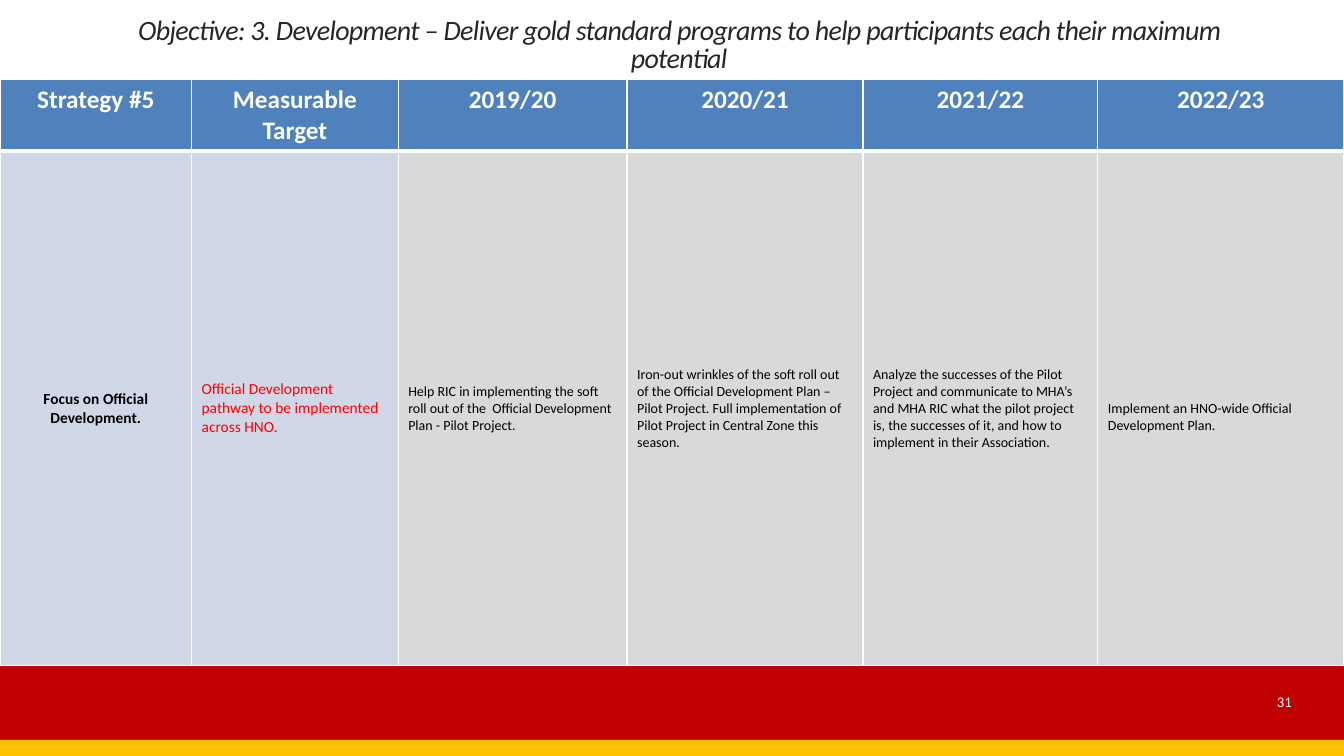
from dataclasses import dataclass

from lxml import etree
from pptx import Presentation
from pptx.dml.color import RGBColor
from pptx.enum.shapes import MSO_SHAPE
from pptx.enum.text import MSO_ANCHOR, PP_ALIGN
from pptx.oxml.ns import qn
from pptx.util import Inches, Pt

RECT = MSO_SHAPE.RECTANGLE
TOP, MIDDLE, BOTTOM = MSO_ANCHOR.TOP, MSO_ANCHOR.MIDDLE, MSO_ANCHOR.BOTTOM
LEFT, CENTER, RIGHT = PP_ALIGN.LEFT, PP_ALIGN.CENTER, PP_ALIGN.RIGHT


@dataclass(frozen=True)
class Theme:
    font: str = "Calibri"
    white: str = "FFFFFF"
    black: str = "000000"
    ink: str = "262626"
    red: str = "FF0000"
    blue: str = "4F81BD"
    pale: str = "D0D8E8"
    gray: str = "D9D9D9"
    crimson: str = "C00000"
    gold: str = "FFC000"
    title: float = 20
    head: float = 18
    goal: float = 11
    body: float = 10
    number: float = 10.5


THEME = Theme()


@dataclass(frozen=True)
class Style:
    size: float
    color: str
    align: PP_ALIGN = LEFT
    anchor: MSO_ANCHOR = MIDDLE
    bold: bool = False
    italic: bool = False


@dataclass(frozen=True)
class Band:
    top: float
    height: float
    color: str


@dataclass(frozen=True)
class Label:
    text: str
    box: tuple[float, float, float, float]
    style: Style
    leading: float = 1.0
    tracking: int = 0


@dataclass(frozen=True)
class Column:
    width: float
    head: str
    text: str
    style: Style
    fill: str
    inset: float = 0.05


HEAD = Style(THEME.head, THEME.white, CENTER, TOP, bold=True)
FOCUS = Style(THEME.goal, THEME.black, CENTER, bold=True)
TARGET = Style(THEME.goal, THEME.red)
BODY = Style(THEME.body, THEME.black)

BANDS = [Band(6.59, 0.75, THEME.crimson), Band(7.34, 0.16, THEME.gold)]
LABELS = [
    Label("31", (11.48, 6.76, 1.43, 0.4), Style(THEME.number, THEME.white, RIGHT)),
    Label(
        "Objective: 3. Development – Deliver gold standard programs to help "
        "participants each their maximum potential",
        (1.13, 0.2, 11.21, 0.59),
        Style(THEME.title, THEME.ink, CENTER, BOTTOM, italic=True),
        leading=0.85,
        tracking=-50,
    ),
]
COLUMNS = [
    Column(1.9, "Strategy #5", "Focus on Official Development.", FOCUS, THEME.pale),
    Column(2.05, "Measurable Target",
           "Official Development pathway to be implemented across HNO.",
           TARGET, THEME.pale),
    Column(2.27, "2019/20",
           "Help RIC in implementing the soft roll out of the  Official "
           "Development Plan - Pilot Project.", BODY, THEME.gray),
    Column(2.34, "2020/21",
           "Iron-out wrinkles of the soft roll out of the Official Development "
           "Plan – Pilot Project. Full implementation of Pilot Project in "
           "Central Zone this season.", BODY, THEME.gray),
    Column(2.33, "2021/22",
           "Analyze the successes of the Pilot Project and communicate to MHA’s "
           "and MHA RIC what the pilot project is, the successes of it, and how "
           "to implement in their Association.", BODY, THEME.gray),
    Column(2.44, "2022/23", "Implement an HNO-wide Official Development Plan.",
           BODY, THEME.gray, inset=0.22),
]
ROWS = [0.7, 5.1]


def write(frame, text: str, style: Style):
    para = frame.paragraphs[0]
    para.alignment = style.align
    run = para.add_run()
    run.text = text
    form = {"name": THEME.font, "size": Pt(style.size),
            "bold": style.bold, "italic": style.italic}
    for key, value in form.items():
        setattr(run.font, key, value)
    run.font.color.rgb = RGBColor.from_string(style.color)
    return para


def paint(fill, color: str) -> None:
    fill.solid()
    fill.fore_color.rgb = RGBColor.from_string(color)


def add_band(slide, band: Band) -> None:
    shape = slide.shapes.add_shape(
        RECT, 0, Inches(band.top), Inches(13.33), Inches(band.height))
    shape.shadow.inherit = False
    paint(shape.fill, band.color)
    shape.line.fill.background()


def add_label(slide, label: Label) -> None:
    box = slide.shapes.add_textbox(*map(Inches, label.box))
    frame = box.text_frame
    frame.word_wrap = True
    frame.vertical_anchor = label.style.anchor
    para = write(frame, label.text, label.style)
    para.line_spacing = label.leading
    if label.tracking:
        para.runs[0].font._element.set("spc", str(label.tracking))


def edge_cell(cell, widths: dict[str, float]) -> None:
    props = cell._tc.get_or_add_tcPr()
    for index, (side, width) in enumerate(widths.items()):
        line = etree.Element(qn(f"a:ln{side}"), w=str(int(Pt(width))))
        fill = etree.SubElement(line, qn("a:solidFill"))
        etree.SubElement(fill, qn("a:srgbClr"), val=THEME.white)
        props.insert(index, line)


def fill_cell(cell, text: str, style: Style, color: str, inset: float,
              widths: dict[str, float]) -> None:
    cell.margin_top = Inches(inset)
    cell.vertical_anchor = style.anchor
    write(cell.text_frame, text, style)
    paint(cell.fill, color)
    edge_cell(cell, widths)


def add_plan(slide) -> None:
    table = slide.shapes.add_table(
        len(ROWS), len(COLUMNS), 0, Inches(0.79),
        Inches(13.33), Inches(sum(ROWS))).table
    for row, height in zip(table.rows, ROWS):
        row.height = Inches(height)
    for index, col in enumerate(COLUMNS):
        table.columns[index].width = Inches(col.width)
        fill_cell(table.cell(0, index), col.head, HEAD, THEME.blue, 0.05,
                  {"L": 1, "R": 1, "T": 1, "B": 3})
        fill_cell(table.cell(1, index), col.text, col.style, col.fill, col.inset,
                  {"L": 1, "R": 1, "T": 3, "B": 1})


def main() -> None:
    deck = Presentation()
    deck.slide_width, deck.slide_height = Inches(13.33), Inches(7.5)
    slide = deck.slides.add_slide(deck.slide_layouts[6])
    for band in BANDS:
        add_band(slide, band)
    add_plan(slide)
    for label in LABELS:
        add_label(slide, label)
    deck.save("out.pptx")


if __name__ == "__main__":
    main()
